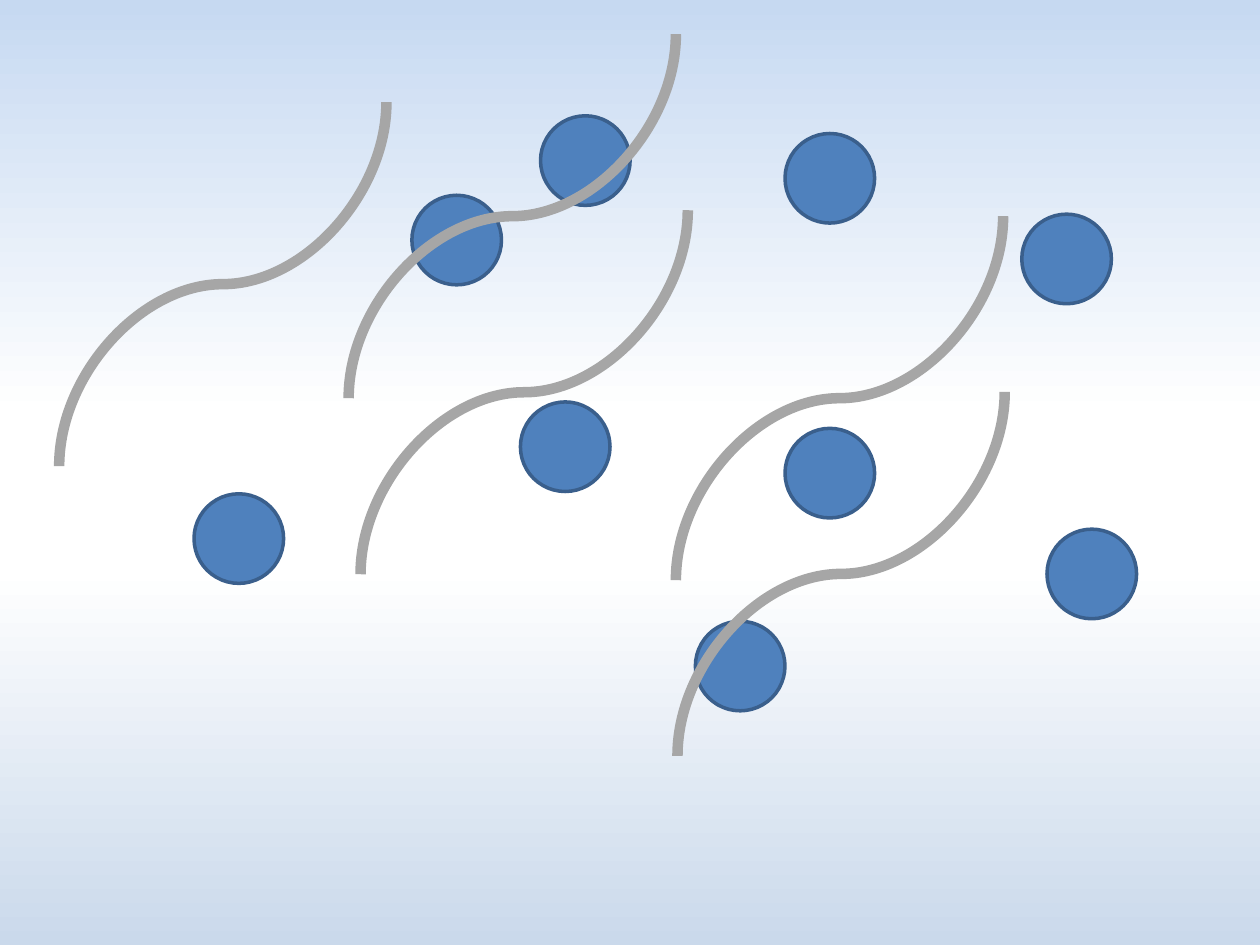
from copy import deepcopy
from dataclasses import dataclass

from lxml import etree
from pptx import Presentation
from pptx.dml.color import RGBColor
from pptx.enum.shapes import MSO_CONNECTOR, MSO_SHAPE
from pptx.oxml.ns import qn
from pptx.util import Pt

CURVE = MSO_CONNECTOR.CURVE
OVAL = MSO_SHAPE.OVAL


@dataclass(frozen=True)
class Theme:
    """Colours and sizes of the slide, lengths in points."""
    ball: str = "4F81BD"
    ball_edge: str = "3A5F8C"
    strand: str = "A6A6A6"
    sky: tuple = ((0, "C6D9F1"), (0.44, "FFFFFF"), (0.6, "FFFFFF"), (1, "CAD9EB"))
    diameter: float = 51.2
    edge_width: float = 2
    strand_run: float = 187
    strand_rise: float = 208
    strand_width: float = 6


THEME = Theme()

BALLS = [(448.6, 244.8), (583.9, 122.4), (598.3, 302.4),
         (110.9, 282.2), (308.9, 66.2), (235.4, 111.6),
         (448.6, 76.3), (297.4, 229.7), (397.4, 355)]

STRAND_STARTS = [(206, 328.2), (199.2, 227.6), (33.8, 266.4),
                 (386.2, 331.6), (387.1, 432)]


def rgb(value):
    """Turn a hex string into a colour."""
    return RGBColor.from_string(value)


def paint_background(s):
    """Fill the slide with the vertical gradient of the theme."""
    fill = s.background.fill
    fill.gradient()
    fill.gradient_angle = 270
    stops = s.element.xpath(".//a:gsLst")[0]
    while len(stops) < len(THEME.sky):
        stops.append(deepcopy(stops[0]))
    for stop, (position, color) in zip(fill.gradient_stops, THEME.sky):
        stop.position = position
        stop.color.rgb = rgb(color)


def add_ball(s, left, top):
    """Add an outlined circle."""
    size = Pt(THEME.diameter)
    sp = s.shapes.add_shape(OVAL, Pt(left), Pt(top), size, size)
    sp.shadow.inherit = False
    sp.fill.solid()
    sp.fill.fore_color.rgb = rgb(THEME.ball)
    sp.line.color.rgb = rgb(THEME.ball_edge)
    sp.line.width = Pt(THEME.edge_width)


def add_strand(s, x, y):
    """Add an S-curve rising to the right from its lower left end."""
    run, rise = THEME.strand_run, THEME.strand_rise
    left = x + (run - rise) / 2
    top = y - (run + rise) / 2
    sp = s.shapes.add_connector(CURVE, Pt(left + rise), Pt(top + run), Pt(left), Pt(top))
    sp.line.color.rgb = rgb(THEME.strand)
    sp.line.width = Pt(THEME.strand_width)
    props = sp.element.spPr
    props.find(qn("a:xfrm")).set("rot", str(90 * 60000))
    etree.SubElement(props, qn("a:effectLst"))


def main():
    """Build the slide and save it."""
    prs = Presentation()
    prs.slide_width, prs.slide_height = Pt(720), Pt(540)
    s = prs.slides.add_slide(prs.slide_layouts[6])
    paint_background(s)
    for left, top in BALLS:
        add_ball(s, left, top)
    for x, y in STRAND_STARTS:
        add_strand(s, x, y)
    prs.save("out.pptx")


if __name__ == "__main__":
    main()
